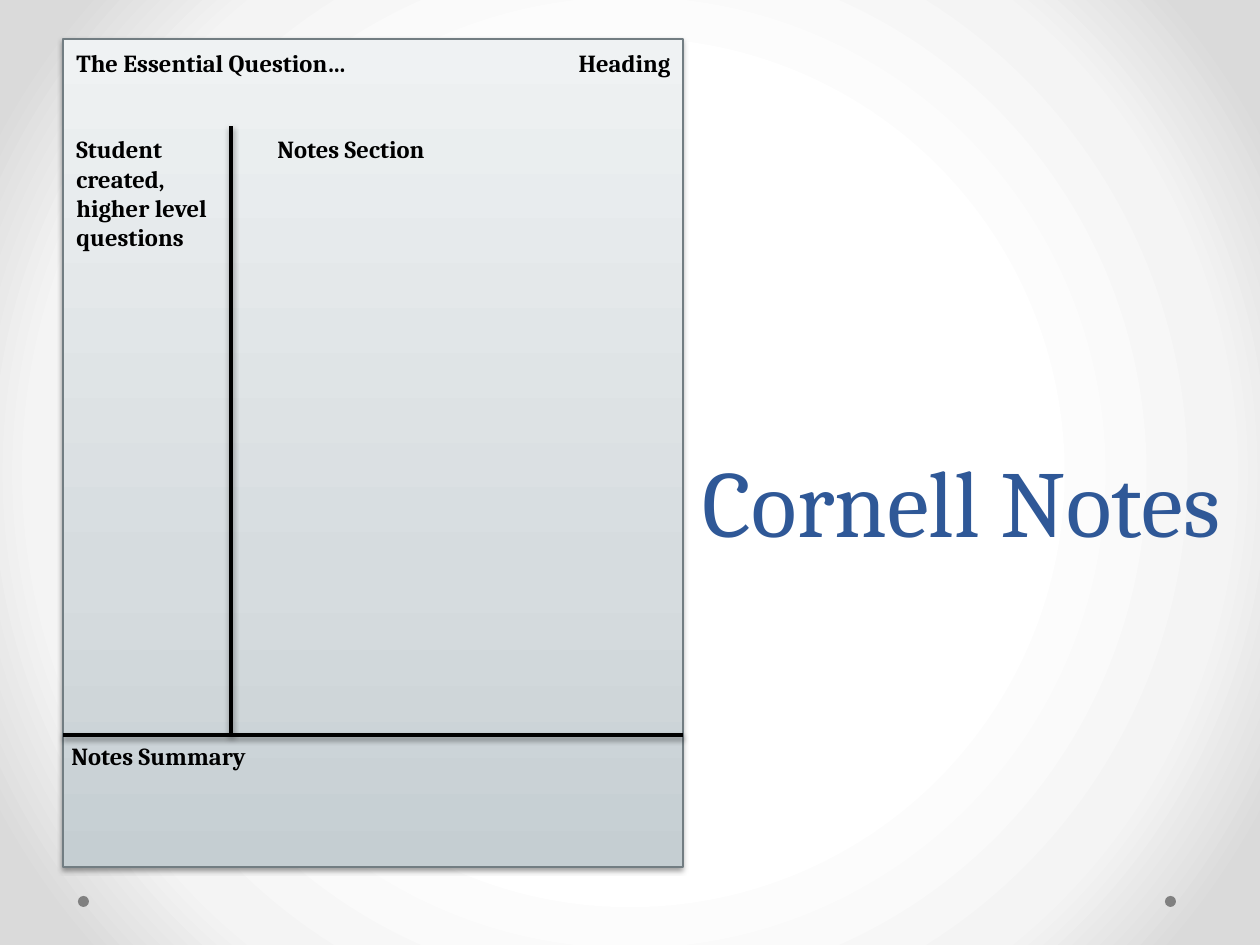
from lxml import etree
from pptx import Presentation
from pptx.dml.color import RGBColor
from pptx.enum.shapes import MSO_CONNECTOR, MSO_SHAPE
from pptx.enum.text import MSO_ANCHOR, MSO_AUTO_SIZE, PP_ALIGN
from pptx.oxml import parse_xml
from pptx.oxml.ns import qn
from pptx.util import Emu, Pt

RECTANGLE, ELLIPSE = MSO_SHAPE.RECTANGLE, MSO_SHAPE.OVAL
STRAIGHT = MSO_CONNECTOR.STRAIGHT
LEFT, CENTER, RIGHT = PP_ALIGN.LEFT, PP_ALIGN.CENTER, PP_ALIGN.RIGHT
BOTTOM = MSO_ANCHOR.BOTTOM
NO_AUTOFIT, GROW = MSO_AUTO_SIZE.NONE, MSO_AUTO_SIZE.SHAPE_TO_FIT_TEXT
FONT = "Cambria"
NAMESPACE = "http://schemas.openxmlformats.org/drawingml/2006/main"
UPWARD = '<a:lin ang="16200000" scaled="0"/>'
FROM_CENTER = ('<a:path path="circle"><a:fillToRect l="50000" t="50000" '
               'r="50000" b="50000"/></a:path>')


def px(*lengths):
    return [Emu(round(length * 914400 / 126)) for length in lengths]


def color(value):
    return RGBColor.from_string(value)


def set_gradient(properties, stops, direction):
    stop_xml = "".join(
        f'<a:gs pos="{position * 1000}"><a:srgbClr val="{value}"/></a:gs>'
        for position, value in stops)
    gradient = parse_xml(
        f'<a:gradFill xmlns:a="{NAMESPACE}" rotWithShape="1">'
        f'<a:gsLst>{stop_xml}</a:gsLst>{direction}</a:gradFill>')
    properties.replace(properties.find(qn("a:solidFill")), gradient)


def add_shadow(properties):
    for effects in properties.findall(qn("a:effectLst")):
        properties.remove(effects)
    effects = etree.SubElement(properties, qn("a:effectLst"))
    shadow = etree.SubElement(effects, qn("a:outerShdw"), blurRad="39370",
                              dist="20320", dir="5400000", rotWithShape="0")
    black = etree.SubElement(shadow, qn("a:srgbClr"), val="000000")
    etree.SubElement(black, qn("a:alpha"), val="38000")


def write_text(shape, text, size=14, bold=True, ink="000000", align=LEFT,
               spacing=None, autofit=GROW):
    frame = shape.text_frame
    frame.word_wrap = True
    frame.auto_size = autofit
    paragraph = frame.paragraphs[0]
    paragraph.alignment = align
    if spacing:
        paragraph.line_spacing = Pt(spacing)
    run = paragraph.add_run()
    run.text = text
    run.font.name = FONT
    run.font.size = Pt(size)
    run.font.bold = bold
    run.font.color.rgb = color(ink)


def add_rule(slide, x1, y1, x2, y2):
    rule = slide.shapes.add_connector(STRAIGHT, *px(x1, y1, x2, y2))
    rule.line.color.rgb = color("000000")
    rule.line.width = Pt(2.25)
    add_shadow(rule.element.spPr)


def add_background(slide, width):
    slide.background.fill.solid()
    properties = next(slide.element.iter(qn("p:bgPr")))
    set_gradient(properties,
                 [(50, "FFFFFF"), (76, "F4F4F4"), (92, "DADADA")], FROM_CENTER)
    for left in (width - 95, 78):
        dot = slide.shapes.add_shape(ELLIPSE, *px(left, 896, 11, 11))
        dot.shadow.inherit = False
        dot.fill.solid()
        dot.fill.fore_color.rgb = color("808080")
        dot.line.fill.background()


def add_title(slide, left, top, width, height):
    title = slide.shapes.title
    title.left, title.top, title.width, title.height = px(left, top, width, height)
    title.text_frame.vertical_anchor = BOTTOM
    write_text(title, "Cornell Notes", size=54, bold=False, ink="2F5897",
               align=CENTER, spacing=58, autofit=NO_AUTOFIT)


def add_notes_page(slide, left, top, width, height):
    page = slide.shapes.add_shape(RECTANGLE, *px(left, top, width, height))
    page.fill.solid()
    set_gradient(page.element.spPr,
                 [(0, "C5CED2"), (35, "D6DCDF"), (100, "EFF2F3")], UPWARD)
    page.line.color.rgb = color("727D82")
    page.line.width = Pt(0.75)
    add_shadow(page.element.spPr)

    column, header, summary = left + 168, top + 87, top + 696
    add_rule(slide, column, header, column, summary)
    add_rule(slide, left, summary, left + width, summary)

    labels = [
        ("Heading", width - 189, 3, 189, 43, RIGHT),
        ("The Essential Question…", 1, 3, 408, 42, LEFT),
        ("Notes Section", 202, 89, 408, 42, LEFT),
        ("Student created, higher level questions", 1, 89, 168, 131, LEFT),
        ("Notes Summary", -4, 696, 234, 43, LEFT),
    ]
    for text, x, y, label_width, label_height, align in labels:
        label = slide.shapes.add_textbox(
            *px(left + x, top + y, label_width, label_height))
        write_text(label, text, align=align)


def main():
    presentation = Presentation()
    presentation.slide_width, presentation.slide_height = px(1260, 945)
    slide = presentation.slides.add_slide(presentation.slide_layouts[5])
    add_background(slide, 1260)
    add_title(slide, 683, 343, 557, 220)
    add_notes_page(slide, 63, 39, 620, 828)
    presentation.save("out.pptx")


if __name__ == "__main__":
    main()
